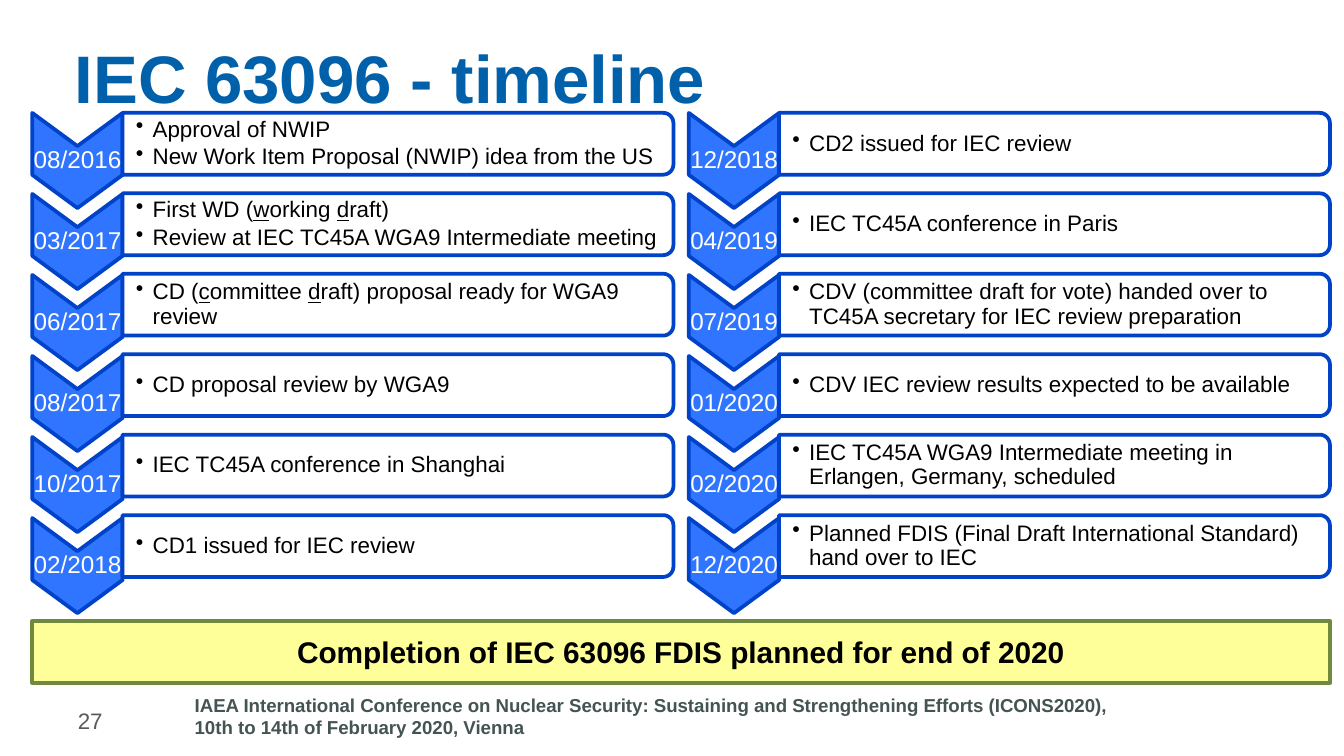
from math import cos, pi, sin

from lxml.etree import SubElement
from pptx import Presentation
from pptx.dml.color import RGBColor
from pptx.enum.shapes import MSO_SHAPE
from pptx.enum.text import MSO_ANCHOR, PP_ALIGN
from pptx.oxml.ns import qn
from pptx.util import Pt

FONT = "Arial"
COLORS = {
    "title": "0060A9",
    "footer": "435452",
    "number": "595959",
    "chevron": "3075FF",
    "outline": "0042C8",
    "white": "FFFFFF",
    "black": "000000",
    "banner": "FFFF99",
    "banner_line": "71893F",
}

# Underscores enclose underlined letters
MILESTONES_2016_2018 = [
    ("08/2016", ["Approval of NWIP", "New Work Item Proposal (NWIP) idea from the US"]),
    ("03/2017", ["First WD (_w_orking _d_raft)", "Review at IEC TC45A WGA9 Intermediate meeting"]),
    ("06/2017", ["CD (_c_ommittee _d_raft) proposal ready for WGA9 review"]),
    ("08/2017", ["CD proposal review by WGA9"]),
    ("10/2017", ["IEC TC45A conference in Shanghai"]),
    ("02/2018", ["CD1 issued for IEC review"]),
]
MILESTONES_2018_2020 = [
    ("12/2018", ["CD2 issued for IEC review"]),
    ("04/2019", ["IEC TC45A conference in Paris"]),
    ("07/2019", ["CDV (committee draft for vote) handed over to TC45A secretary "
                 "for IEC review preparation"]),
    ("01/2020", ["CDV IEC review results expected to be available"]),
    ("02/2020", ["IEC TC45A WGA9 Intermediate meeting in Erlangen, Germany, scheduled"]),
    ("12/2020", ["Planned FDIS (Final Draft International Standard) hand over to IEC"]),
]

CHEVRON_WIDTH, CHEVRON_HEIGHT, NOTCH = 48.4, 51, 17.8
PANEL_HEIGHT, CORNER = 33.1, 5.5
CHEVRON_STEP, PANEL_STEP = 43.4, 43.1


def rgb(name):
    return RGBColor.from_string(COLORS[name])


def write(shape, lines, size, color, bold=False, align=PP_ALIGN.LEFT,
          anchor=MSO_ANCHOR.TOP, insets=(7.2, 3.6, 7.2, 3.6)):
    """Fill a shape with one paragraph per line; return the paragraphs."""
    frame = shape.text_frame
    frame.word_wrap = True
    frame.vertical_anchor = anchor
    (frame.margin_left, frame.margin_top,
     frame.margin_right, frame.margin_bottom) = map(Pt, insets)
    for i, line in enumerate(lines):
        paragraph = frame.paragraphs[0] if i == 0 else frame.add_paragraph()
        paragraph.alignment = align
        for j, piece in enumerate(line.split("_")):
            run = paragraph.add_run()
            run.text = piece
            run.font.name, run.font.size, run.font.bold = FONT, Pt(size), bold
            run.font.color.rgb = rgb(color)
            if j % 2:
                run.font.underline = True
    return frame.paragraphs


def paint(shape, fill, line):
    shape.shadow.inherit = False
    shape.fill.solid()
    shape.fill.fore_color.rgb = rgb(fill)
    shape.line.color.rgb = rgb(line)
    shape.line.width = Pt(2)


def outline(slide, left, top, points):
    """Closed shape from points relative to its top left corner."""
    start, *rest = [(Pt(left + x), Pt(top + y)) for x, y in points]
    builder = slide.shapes.build_freeform(*start, scale=1.0)
    builder.add_line_segments(rest, close=True)
    return builder.convert_to_shape()


def add_text(slide, box, lines, size, color, **options):
    textbox = slide.shapes.add_textbox(*map(Pt, box))
    write(textbox, lines, size, color, **options)


def add_chevron(slide, left, top, date):
    middle, shoulder = CHEVRON_WIDTH / 2, CHEVRON_HEIGHT - NOTCH
    chevron = outline(slide, left, top, [
        (0, 0), (middle, NOTCH), (CHEVRON_WIDTH, 0),
        (CHEVRON_WIDTH, shoulder), (middle, CHEVRON_HEIGHT), (0, shoulder)])
    paint(chevron, "chevron", "outline")
    label, = write(chevron, [date], 13, "white", align=PP_ALIGN.CENTER,
                   anchor=MSO_ANCHOR.MIDDLE, insets=(0, 18.5, 0, 18.5))
    label.line_spacing = 0.9
    label.space_after = Pt(4.5)


def add_panel(slide, left, top, width, notes):
    # Square on the left, rounded on the right
    angles = [i * pi / 16 for i in range(9)]
    upper = [(width - CORNER + CORNER * sin(a), CORNER - CORNER * cos(a)) for a in angles]
    lower = [(x, PANEL_HEIGHT - y) for x, y in reversed(upper)]
    panel = outline(slide, left, top, [(0, 0), *upper, *lower, (0, PANEL_HEIGHT)])
    paint(panel, "white", "outline")
    fill_color = panel.fill._xPr.find(qn("a:solidFill"))[0]
    SubElement(fill_color, qn("a:alpha"), val="90000")

    for note in write(panel, notes, 12, "black", anchor=MSO_ANCHOR.MIDDLE,
                      insets=(7.2, 2.2, 2.2, 2.2)):
        properties = note._p.get_or_add_pPr()
        properties.set("marL", str(Pt(9)))
        properties.set("indent", str(Pt(-9)))
        SubElement(properties, qn("a:buChar"), char="•")
        note.line_spacing = 0.9
        note.space_after = Pt(1.8)


def add_timeline(slide, left, top, width, milestones):
    for row, (date, notes) in enumerate(milestones):
        add_chevron(slide, left, top + row * CHEVRON_STEP, date)
        add_panel(slide, left + CHEVRON_WIDTH, top + row * PANEL_STEP,
                  width - CHEVRON_WIDTH, notes)


def add_banner(slide, box, message):
    banner = slide.shapes.add_shape(MSO_SHAPE.RECTANGLE, *map(Pt, box))
    paint(banner, "banner", "banner_line")
    write(banner, [message], 16, "black", bold=True, align=PP_ALIGN.CENTER,
          anchor=MSO_ANCHOR.MIDDLE)


def add_footer(slide, left, top):
    add_text(slide, (left + 62.6, top, 563, 31.7),
             ["IAEA International Conference on Nuclear Security: "
              "Sustaining and Strengthening Efforts (ICONS2020),",
              "10th to 14th of February 2020, Vienna"],
             10, "footer", bold=True)
    add_text(slide, (left, top + 7.2, 62.6, 21.6), ["27"], 12, "number",
             anchor=MSO_ANCHOR.MIDDLE)


def main():
    presentation = Presentation()
    presentation.slide_width, presentation.slide_height = Pt(720), Pt(405)
    slide = presentation.slides.add_slide(presentation.slide_layouts[6])

    # Title
    add_text(slide, (34.6, 10.8, 670.3, 95), ["IEC 63096 - timeline"], 36, "title",
             bold=True, insets=(5.4, 8.7, 5.4, 3.6))
    # Two columns of milestones
    add_timeline(slide, 17.3, 60.5, 343.5, MILESTONES_2016_2018)
    add_timeline(slide, 369, 60.5, 343.5, MILESTONES_2018_2020)
    # Conclusion and footer
    add_banner(slide, (17.3, 332.8, 695.2, 33.1),
               "Completion of IEC 63096 FDIS planned for end of 2020")
    add_footer(slide, 34.6, 368)

    presentation.save("out.pptx")


if __name__ == "__main__":
    main()
